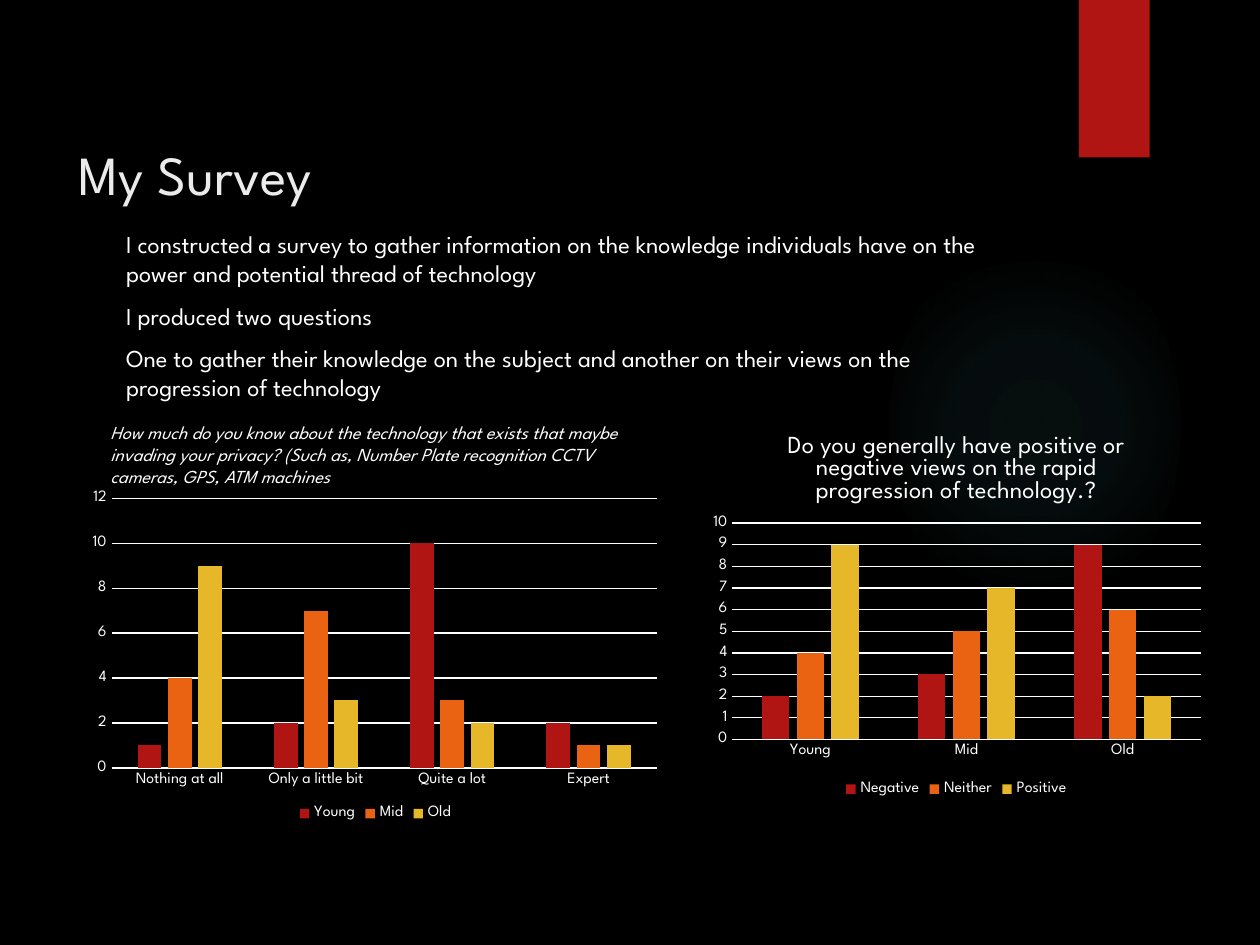
"""Build the survey slide with two clustered column charts."""
from pptx import Presentation
from pptx.chart.data import CategoryChartData
from pptx.dml.color import RGBColor
from pptx.enum.chart import XL_CHART_TYPE, XL_LEGEND_POSITION, XL_TICK_MARK
from pptx.enum.shapes import MSO_SHAPE
from pptx.oxml import parse_xml
from pptx.oxml.ns import nsdecls
from pptx.util import Pt

FONT = "League Spartan"
COLORS = {
    "background": "000000",
    "title": "EBEBEB",
    "text": "FFFFFF",
    "glow": "50B9C1",
    "red": "B01513",
    "orange": "EA6312",
    "yellow": "E6B729",
}
SERIES_COLORS = ("red", "orange", "yellow")


def rgb(name):
    return RGBColor.from_string(COLORS[name])


def points(*lengths):
    return [Pt(length) for length in lengths]


def style_font(font, size, color="text", italic=False):
    font.name = FONT
    font.size = Pt(size)
    font.bold = False
    font.italic = italic
    font.color.rgb = rgb(color)


def add_text(page, text, *, frame, size, color="text", italic=False, gap=0):
    box = page.shapes.add_textbox(*points(*frame))
    box.text_frame.word_wrap = True
    box.text_frame.text = text
    for index, para in enumerate(box.text_frame.paragraphs):
        para.space_before = Pt(gap if index else 0)
        for span in para.runs:
            style_font(span.font, size, color, italic)


def add_plain_shape(page, kind, frame, color):
    shape = page.shapes.add_shape(kind, *points(*frame))
    shape.shadow.inherit = False
    shape.fill.solid()
    shape.fill.fore_color.rgb = rgb(color)
    shape.line.fill.background()
    return shape


def add_glow(page, frame):
    glow = add_plain_shape(page, MSO_SHAPE.OVAL, frame, "glow")
    stops = "".join(
        f'<a:gs pos="{place * 1000}"><a:srgbClr val="{COLORS["glow"]}">'
        f'<a:alpha val="{alpha * 1000}"/></a:srgbClr></a:gs>'
        for place, alpha in ((0, 7), (36, 6), (69, 0))
    )
    gradient = parse_xml(
        f'<a:gradFill {nsdecls("a")} rotWithShape="1"><a:gsLst>{stops}</a:gsLst>'
        '<a:path path="circle"><a:fillToRect l="50000" t="50000" r="50000" b="50000"/>'
        "</a:path></a:gradFill>"
    )
    properties = glow.element.spPr
    properties.replace(properties.find("{*}solidFill"), gradient)


def style_line(line):
    line.color.rgb = rgb("text")
    line.width = Pt(0.75)


def set_plot_area(chart, x, y, w, h):
    values = "".join(
        f'<c:{key} val="{value}"/>' for key, value in zip("xywh", (x, y, w, h))
    )
    layout = parse_xml(
        f'<c:layout {nsdecls("c")}><c:manualLayout><c:layoutTarget val="inner"/>'
        f'<c:xMode val="edge"/><c:yMode val="edge"/>{values}</c:manualLayout></c:layout>'
    )
    plot_area = chart.element.chart.plotArea
    for former in plot_area.findall("{*}layout"):
        plot_area.remove(former)
    plot_area.insert(0, layout)


def style_axes(chart, top, step):
    for axis in (chart.category_axis, chart.value_axis):
        axis.major_tick_mark = axis.minor_tick_mark = XL_TICK_MARK.NONE
        style_font(axis.tick_labels.font, 9)
    style_line(chart.category_axis.format.line)
    values = chart.value_axis
    values.format.line.fill.background()
    style_line(values.major_gridlines.format.line)
    values.minimum_scale, values.maximum_scale, values.major_unit = 0, top, step


def add_column_chart(page, categories, series, *, frame, plot, top, step, title=None):
    data = CategoryChartData()
    data.categories = categories
    for name, values in series.items():
        data.add_series(name, values)
    kind = XL_CHART_TYPE.COLUMN_CLUSTERED
    chart = page.shapes.add_chart(kind, *points(*frame), data).chart
    style_font(chart.font, 10)
    chart.has_title = title is not None
    if title:
        chart.chart_title.include_in_layout = False
        chart.chart_title.text_frame.text = title
        style_font(chart.chart_title.text_frame.paragraphs[0].runs[0].font, 14)
    chart.has_legend = True
    chart.legend.position = XL_LEGEND_POSITION.BOTTOM
    chart.legend.include_in_layout = False
    style_font(chart.legend.font, 9)
    style_axes(chart, top, step)
    columns = chart.plots[0]
    columns.gap_width, columns.overlap = 219, -27
    columns.vary_by_categories = False
    for item, color in zip(columns.series, SERIES_COLORS):
        item.format.fill.solid()
        item.format.fill.fore_color.rgb = rgb(color)
    set_plot_area(chart, *plot)


def main():
    deck = Presentation()
    deck.slide_width, deck.slide_height = points(720, 540)
    page = deck.slides.add_slide(deck.slide_layouts[6])
    page.background.fill.solid()
    page.background.fill.fore_color.rgb = rgb("background")

    add_glow(page, (508.5, 132, 166, 222))
    add_plain_shape(page, MSO_SHAPE.RECTANGLE, (616.5, 0, 40.5, 90), "red")
    add_text(page, "My Survey", frame=(38, 76.5, 555, 83), size=31.5, color="title")
    statements = (
        "I constructed a survey to gather information on the knowledge individuals "
        "have on the power and potential thread of technology",
        "I produced two questions",
        "One to gather their knowledge on the subject and another on their views "
        "on the progression of technology",
    )
    add_text(page, "\n".join(statements), frame=(65, 127.5, 528.5, 105), size=13.9, gap=7.5)
    add_column_chart(
        page,
        ("Nothing at all", "Only a little bit", "Quite a lot", "Expert"),
        {"Young": (1, 2, 10, 2), "Mid": (4, 7, 3, 1), "Old": (9, 3, 2, 1)},
        frame=(47, 277, 335, 195), plot=(0.05, 0.04, 0.93, 0.79), top=12, step=2,
    )
    add_text(
        page,
        "How much do you know about the technology that exists that maybe invading "
        "your privacy? (Such as, Number Plate recognition CCTV cameras, GPS, ATM machines",
        frame=(56, 237, 318, 45), size=10.5, italic=True,
    )
    add_column_chart(
        page,
        ("Young", "Mid", "Old"),
        {"Negative": (2, 3, 9), "Neither": (4, 5, 6), "Positive": (9, 7, 2)},
        frame=(401, 237, 291, 221), plot=(0.06, 0.28, 0.92, 0.56), top=10, step=1,
        title="Do you generally have positive or negative views on the rapid "
        "progression of technology.?",
    )
    deck.save("out.pptx")


if __name__ == "__main__":
    main()
